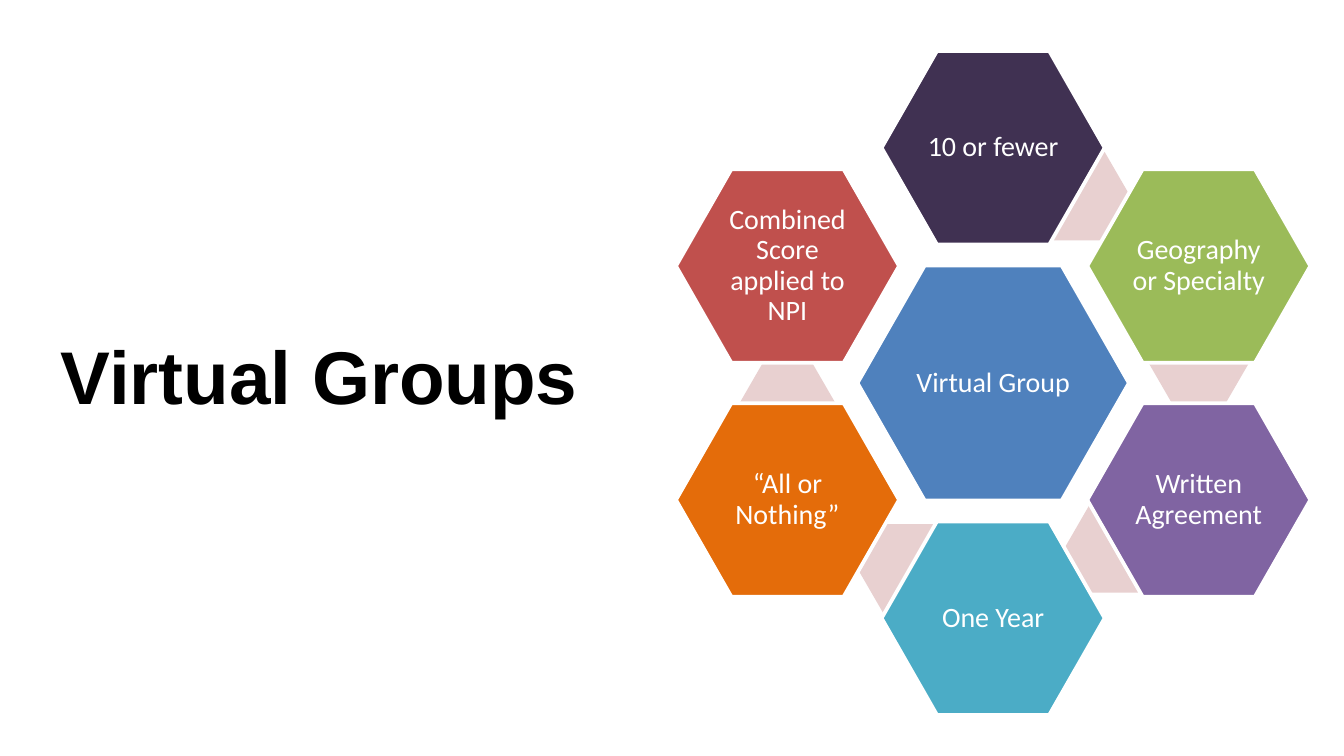
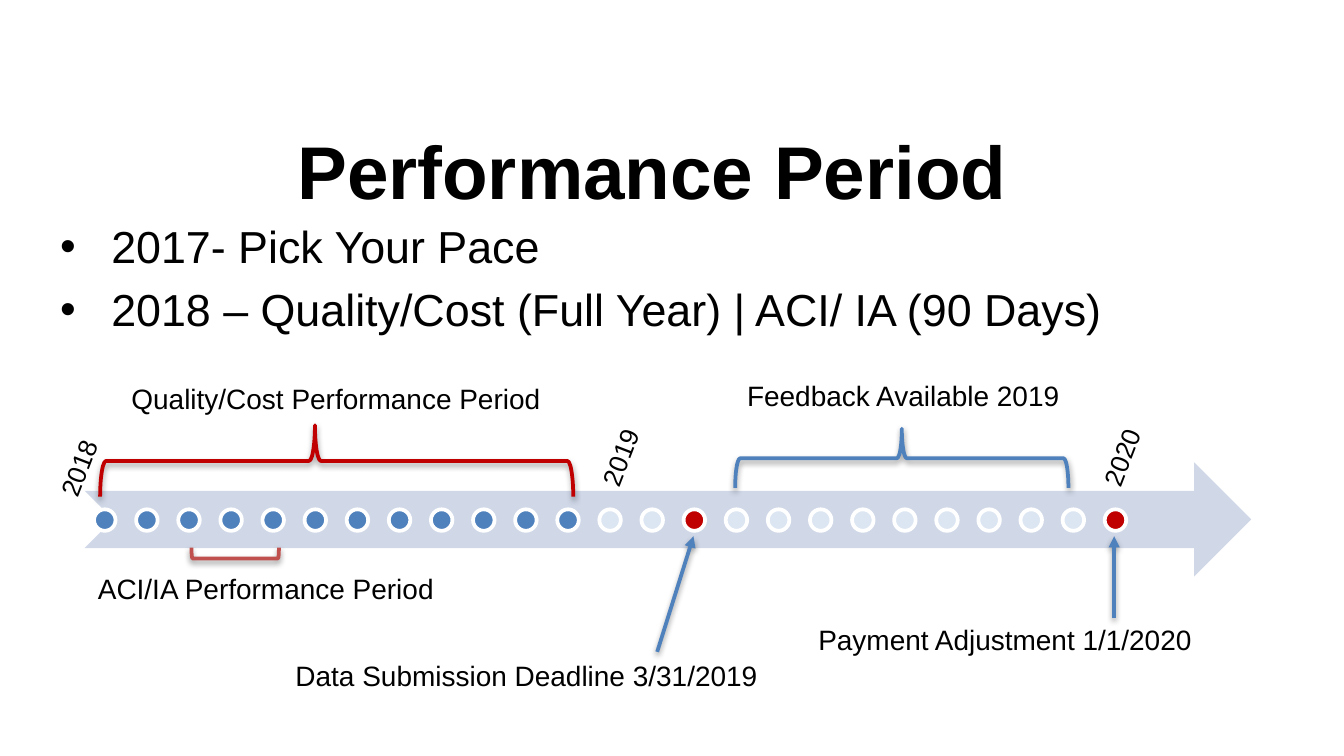
import dataclasses

import pptx
import pptx.dml.color
import pptx.enum.shapes
import pptx.enum.text
import pptx.oxml
import pptx.oxml.ns
import pptx.util

Inches = pptx.util.Inches
Pt = pptx.util.Pt
Shape = pptx.enum.shapes.MSO_SHAPE
Align = pptx.enum.text.PP_ALIGN
Anchor = pptx.enum.text.MSO_ANCHOR
qn = pptx.oxml.ns.qn


@dataclasses.dataclass(frozen=True)
class Theme:
    black: str = "000000"
    white: str = "FFFFFF"
    blue: str = "4F81BD"
    pale_blue: str = "DCE6F2"
    band: str = "D0D8E8"
    bridge: str = "E8D0D0"
    plum: str = "403152"
    green: str = "9BBB59"
    purple: str = "8064A2"
    teal: str = "4BACC6"
    orange: str = "E46C0A"
    brick: str = "C0504D"
    red: str = "C00000"
    text_font: str = "Arial"
    diagram_font: str = "Calibri"
    title_size: int = 40
    body_size: int = 24
    label_size: int = 15
    year_size: int = 14
    line_width: int = 2


def rgb(value):
    return pptx.dml.color.RGBColor.from_string(value)


def drawing_xml(tag, attributes, content=""):
    return pptx.oxml.parse_xml(
        f'<a:{tag} {pptx.oxml.ns.nsdecls("a")} {attributes}>{content}</a:{tag}>')


class Deck:
    def __init__(self, theme):
        self.theme = theme
        self.presentation = pptx.Presentation()
        # Widescreen, 16:9
        self.presentation.slide_width = Inches(10)
        self.presentation.slide_height = Inches(10 * 9 / 16)
        self.slide = None

    def new_slide(self):
        self.slide = self.presentation.slides.add_slide(self.presentation.slide_layouts[6])

    # Text
    def style(self, paragraph, size, color, font, bold=False):
        paragraph.font.size = Pt(size)
        paragraph.font.bold = bold
        paragraph.font.name = font
        paragraph.font.color.rgb = rgb(color)

    def text_frame(self, left, top, width, height, rotation=0):
        box = self.slide.shapes.add_textbox(
            Inches(left), Inches(top), Inches(width), Inches(height))
        box.rotation = rotation
        box.text_frame.word_wrap = True
        return box.text_frame

    def title(self, text, left, top, width, height=0.94):
        frame = self.text_frame(left, top, width, height)
        frame.vertical_anchor = Anchor.MIDDLE
        heading = frame.paragraphs[0]
        heading.text = text
        heading.alignment = Align.CENTER
        self.style(heading, self.theme.title_size, self.theme.black, self.theme.text_font, True)

    def bullets(self, items, left, top, width, height):
        frame = self.text_frame(left, top, width, height)
        frame.margin_top = Inches(0.07)
        for index, item in enumerate(items):
            point = frame.add_paragraph() if index else frame.paragraphs[0]
            point.text = item
            if index:
                point.space_before = Pt(5)
            properties = point._p.get_or_add_pPr()
            properties.set("marL", str(Inches(0.38)))
            properties.set("indent", str(Inches(-0.38)))
            properties.append(drawing_xml("buFont", f'typeface="{self.theme.text_font}"'))
            properties.append(drawing_xml("buChar", 'char="•"'))
            self.style(point, self.theme.body_size, self.theme.black, self.theme.text_font)

    def label(self, text, left, top, width, height=0.35, size=None, rotation=0):
        frame = self.text_frame(left, top, width, height, rotation)
        frame.auto_size = pptx.enum.text.MSO_AUTO_SIZE.SHAPE_TO_FIT_TEXT
        frame.text = text
        self.style(frame.paragraphs[0], size or self.theme.label_size,
                   self.theme.black, self.theme.text_font)

    # Shapes
    def shape(self, kind, left, top, width, height, fill=None, line=None,
              adjustments=(), rotation=0):
        item = self.slide.shapes.add_shape(
            kind, Inches(left), Inches(top), Inches(width), Inches(height))
        item.shadow.inherit = False
        item.rotation = rotation
        for index, value in enumerate(adjustments):
            item.adjustments[index] = value
        if fill:
            item.fill.solid()
            item.fill.fore_color.rgb = rgb(fill)
        else:
            item.fill.background()
        if line:
            item.line.color.rgb = rgb(line)
            item.line.width = Pt(self.theme.line_width)
        else:
            item.line.fill.background()
        return item

    def hexagon(self, text, center_x, center_y, width, height, fill):
        cell = self.shape(Shape.HEXAGON, center_x - width / 2, center_y - height / 2,
                          width, height, fill, self.theme.white, [0.286])
        frame = cell.text_frame
        frame.word_wrap = True
        frame.vertical_anchor = Anchor.MIDDLE
        frame.margin_left = frame.margin_right = Inches(0.02)
        frame.margin_top = frame.margin_bottom = Inches(0.02)
        caption = frame.paragraphs[0]
        caption.text = text
        caption.alignment = Align.CENTER
        caption.line_spacing = 0.9
        self.style(caption, self.theme.label_size, self.theme.white, self.theme.diagram_font)

    def add_shadow(self, item):
        properties = item._element.spPr
        for effects in properties.findall(qn("a:effectLst")):
            properties.remove(effects)
        properties.append(drawing_xml(
            "effectLst", "",
            '<a:outerShdw blurRad="40000" dist="20000" dir="5400000" rotWithShape="0">'
            f'<a:srgbClr val="{self.theme.black}"><a:alpha val="38000"/></a:srgbClr>'
            '</a:outerShdw>'))

    def bracket(self, kind, left, top, width, height, line, rotation, adjustments=()):
        self.add_shadow(self.shape(kind, left, top, width, height, None, line,
                                   adjustments, rotation))

    def arrow(self, start, end):
        pointer = self.slide.shapes.add_connector(
            pptx.enum.shapes.MSO_CONNECTOR.STRAIGHT, *map(Inches, start + end))
        pointer.line.color.rgb = rgb(self.theme.blue)
        pointer.line.width = Pt(self.theme.line_width)
        pointer._element.spPr.find(qn("a:ln")).append(
            drawing_xml("tailEnd", 'type="triangle"'))
        self.add_shadow(pointer)


def virtual_groups(deck):
    theme = deck.theme
    deck.new_slide()
    deck.title("Virtual Groups", 0.19, 2.32, 4.37)

    # Centre of the ring
    center_x, center_y = 7.39, 2.85
    deck.hexagon("Virtual Group", center_x, center_y, 2.02, 1.75, theme.blue)

    # Clockwise ring: caption, fill, offset from the centre, bridge behind it
    side, rise, reach = 1.53, 0.87, 1.75
    ring = [
        ("10 or fewer", theme.plum, (0, -reach), (7.65, 1.13)),
        ("Geography or Specialty", theme.green, (side, -rise), (8.54, 2.36)),
        ("Written Agreement", theme.purple, (side, rise), (7.92, 3.75)),
        ("One Year", theme.teal, (0, reach), (6.38, 3.9)),
        ("“All or Nothing”", theme.orange, (-side, rise), (5.48, 2.71)),
        ("Combined Score applied to NPI", theme.brick, (-side, -rise), None),
    ]
    for caption, fill, (dx, dy), bridge in ring:
        if bridge:
            deck.shape(Shape.HEXAGON, *bridge, 0.76, 0.66, theme.bridge, adjustments=[0.289])
        deck.hexagon(caption, center_x + dx, center_y + dy, 1.66, 1.44, fill)


def performance_period(deck):
    theme = deck.theme
    deck.new_slide()
    deck.title("Performance Period", 0.35, 0.79, 9)
    deck.bullets(["2017- Pick Your Pace",
                  "2018 – Quality/Cost (Full Year) | ACI/ IA (90 Days)"],
                 0.35, 1.56, 9.5, 3.24)

    # Timeline: one dot a month from January 2018 to January 2020
    deck.shape(Shape.NOTCHED_RIGHT_ARROW, 0.63, 3.44, 8.68, 0.85, theme.band)
    first_dot, last_dot, months = 0.7, 8.22, 24
    milestones = (14, 24)
    for month in range(months + 1):
        if month in milestones:
            fill = theme.red
        else:
            fill = theme.blue if month < 12 else theme.pale_blue
        left = first_dot + month * (last_dot - first_dot) / months
        deck.shape(Shape.OVAL, left, 3.79, 0.16, 0.16, fill, theme.white)

    # Periods
    deck.bracket(Shape.LEFT_BRACE, 2.24, 1.67, 0.53, 3.52, theme.red, 90, [0.083, 0.546])
    deck.label("Quality/Cost Performance Period", 0.88, 2.79, 3.33)
    deck.bracket(Shape.RIGHT_BRACE, 6.49, 2.17, 0.44, 2.48, theme.blue, 270)
    deck.label("Feedback Available 2019", 5.46, 2.77, 2.62)
    deck.bracket(Shape.LEFT_BRACKET, 1.71, 3.79, 0.08, 0.65, theme.brick, 270)
    deck.label("ACI/IA Performance Period", 0.63, 4.2, 3.09)

    # Milestones
    deck.arrow((4.89, 4.85), (5.16, 3.99))
    deck.label("Data Submission Deadline 3/31/2019", 2.1, 4.85, 3.69)
    deck.arrow((8.29, 4.6), (8.29, 3.99))
    deck.label("Payment Adjustment 1/1/2020", 5.99, 4.58, 3.08)

    # Years
    for year, left, top in [("2018", 0.25, 3.28), ("2019", 4.28, 3.2), ("2020", 8.01, 3.2)]:
        deck.label(year, left, top, 0.7, 0.34, theme.year_size, 291.1)


def main():
    deck = Deck(Theme())
    virtual_groups(deck)
    performance_period(deck)
    deck.presentation.save("out.pptx")


if __name__ == "__main__":
    main()
